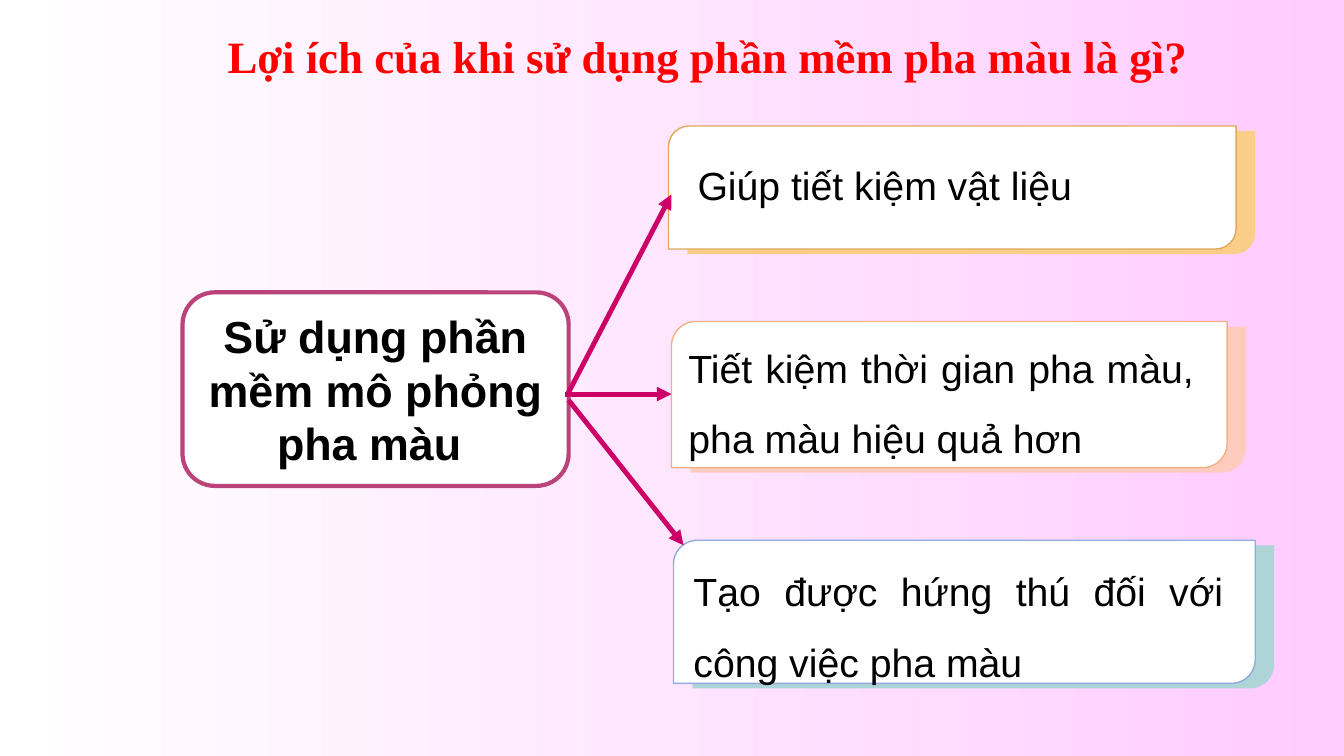
from dataclasses import dataclass
from typing import NamedTuple

from lxml.etree import SubElement as Sub
from pptx import Presentation
from pptx.dml.color import RGBColor as Rgb
from pptx.enum.shapes import MSO_CONNECTOR as Line, MSO_SHAPE as Kind
from pptx.enum.text import MSO_ANCHOR as Anchor, PP_ALIGN as Align
from pptx.oxml.ns import qn
from pptx.util import Inches, Pt

WIDE, HIGH = Inches(13.33), Inches(7.5)
SHIFT_X, SHIFT_Y = 1.4, 0.67


class Box(NamedTuple):
    """Left, top, width and height in percent of the slide."""
    x: float
    y: float
    w: float
    h: float

    def size(self) -> tuple:
        return (*point(self.x, self.y), *point(self.w, self.h))


@dataclass
class Card:
    face: Box
    label: Box
    text: str
    back: str
    edge: str


class Arrow(NamedTuple):
    x1: float
    y1: float
    x2: float
    y2: float


CARDS = [
    Card(Box(49.74, 16.67, 42.24, 16.27), Box(51.16, 17.6, 39.38, 10.93),
         "Giúp tiết kiệm vật liệu", "FACD89", "DEA958"),
    Card(Box(49.96, 42.53, 41.34, 19.33), Box(50.49, 41.73, 39.08, 17.6),
         "Tiết kiệm thời gian pha màu, pha màu hiệu quả hơn",
         "FFCBBF", "F4B183"),
    Card(Box(50.11, 71.47, 43.29, 18.93), Box(50.86, 71.33, 40.89, 19.07),
         "Tạo được hứng thú đối với công việc pha màu",
         "AED4D7", "8FAADC"),
]
ARROWS = [
    Arrow(42.24, 52.13, 49.96, 25.73),
    Arrow(42.01, 52.13, 49.96, 52.13),
    Arrow(42.31, 52.93, 50.86, 72.13),
]


def point(x: float, y: float) -> tuple:
    return round(WIDE * x / 100), round(HIGH * y / 100)


def tint(color, code: str) -> None:
    color.rgb = Rgb.from_string(code)


def write(frame, text: str, size: int, code: str = "000000",
          face: str = "Arial", bold: bool = False,
          align=Align.CENTER, lead: float = 1) -> None:
    frame.word_wrap = True
    frame.text = text
    para = frame.paragraphs[0]
    para.alignment, para.line_spacing = align, lead
    font = para.runs[0].font
    font.name, font.size, font.bold = face, Pt(size), bold
    tint(font.color, code)


def panel(shapes, kind, box: Box, fill: str, edge: str = "", width: float = 1):
    shape = shapes.add_shape(kind, *box.size())
    shape.shadow.inherit = False
    shape.fill.solid()
    tint(shape.fill.fore_color, fill)
    if edge:
        tint(shape.line.color, edge)
        shape.line.width = Pt(width)
    else:
        shape.line.fill.background()
    return shape


def draw_card(shapes, card: Card) -> None:
    group = shapes.add_group_shape().shapes
    face = card.face
    back = face._replace(x=face.x + SHIFT_X, y=face.y + SHIFT_Y)
    panel(group, Kind.ROUND_2_DIAG_RECTANGLE, back, card.back)
    panel(group, Kind.ROUND_2_DIAG_RECTANGLE, face, "FFFFFF", card.edge)
    label = group.add_textbox(*card.label.size())
    write(label.text_frame, card.text, 28, align=Align.JUSTIFY, lead=1.5)


def draw_arrow(shapes, arrow: Arrow) -> None:
    line = shapes.add_connector(Line.STRAIGHT, *point(arrow.x1, arrow.y1),
                                *point(arrow.x2, arrow.y2))
    tint(line.line.color, "CC0066")
    line.line.width = Pt(3.5)
    Sub(line.line._get_or_add_ln(), qn("a:tailEnd"), type="triangle")
    Sub(line._element.spPr, qn("a:effectLst"))


def main() -> None:
    deck = Presentation()
    deck.slide_width, deck.slide_height = WIDE, HIGH
    slide = deck.slides.add_slide(deck.slide_layouts[5])
    shapes = slide.shapes

    # Background
    fill = slide.background.fill
    fill.gradient()
    fill.gradient_angle = 0
    for stop, code in zip(fill.gradient_stops, ("FFFFFF", "FFCCFF")):
        tint(stop.color, code)

    # Title
    title = shapes.title
    title.left, title.top, title.width, title.height = Box(
        13.58, 1.07, 78.17, 12.53).size()
    title.text_frame.vertical_anchor = Anchor.MIDDLE
    write(title.text_frame, "Lợi ích của khi sử dụng phần mềm pha màu là gì?",
          32, "FF0000", "Times New Roman", True)

    # Central idea
    hub = panel(shapes, Kind.ROUNDED_RECTANGLE,
                Box(13.58, 38.67, 28.73, 25.6), "FFFFFF", "BA4379", 3)
    hub.text_frame.vertical_anchor = Anchor.MIDDLE
    write(hub.text_frame, "Sử dụng phần mềm mô phỏng pha màu ", 32, bold=True)

    # Benefits and the arrows to them
    for card in CARDS:
        draw_card(shapes, card)
    for arrow in ARROWS:
        draw_arrow(shapes, arrow)

    deck.save("out.pptx")


if __name__ == "__main__":
    main()
